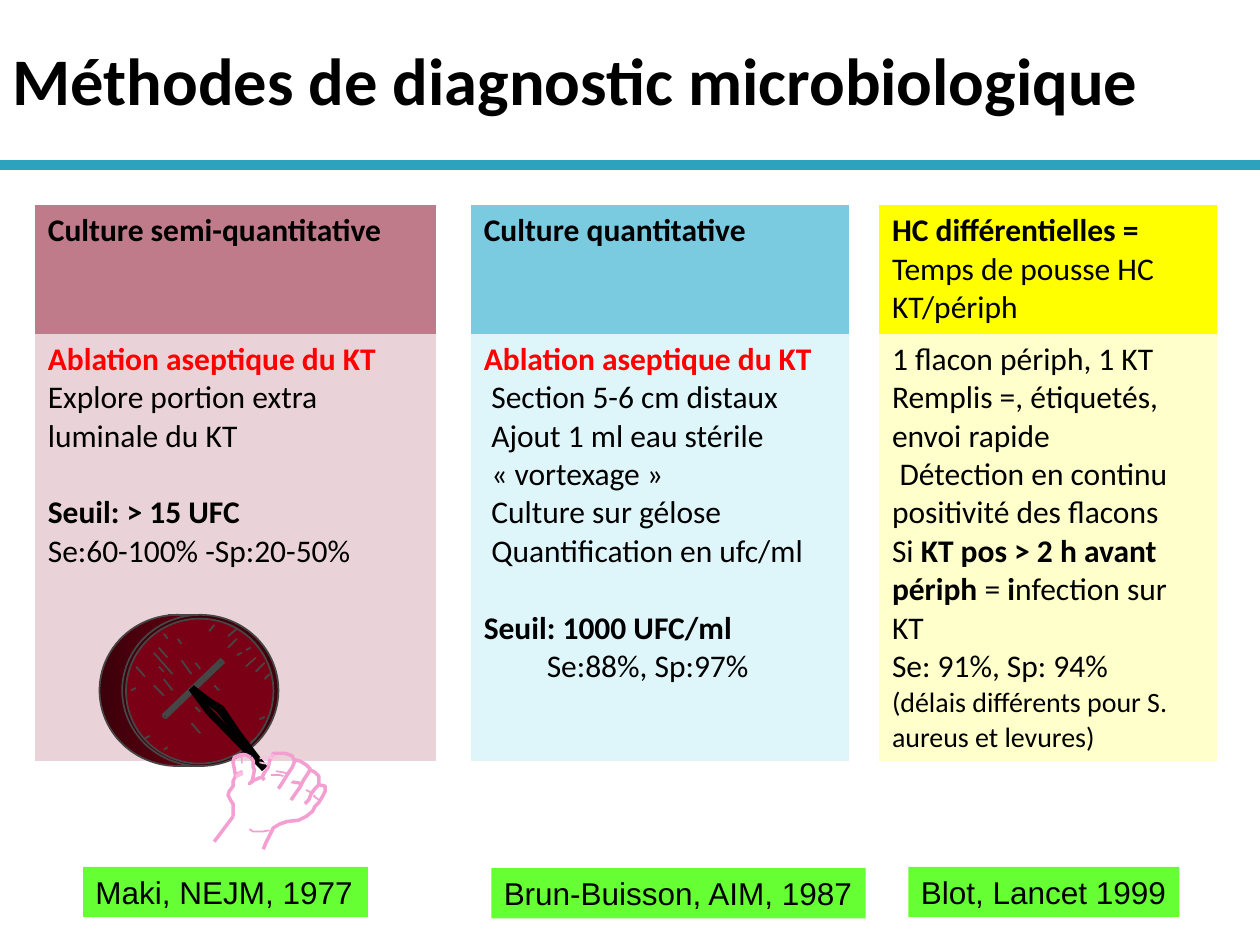
"""Build a slide comparing three microbiological methods of catheter diagnosis."""
import dataclasses
import typing
import lxml.etree
import pptx
import pptx.dml.color
import pptx.enum.shapes
import pptx.enum.text
import pptx.oxml.ns
import pptx.shapes.shapetree
import pptx.slide
import pptx.text.text
import pptx.util

Inches = pptx.util.Inches
Pt = pptx.util.Pt
RGB = pptx.dml.color.RGBColor.from_string
Shape = pptx.enum.shapes.MSO_SHAPE
Tree = pptx.shapes.shapetree.SlideShapes
Point = tuple[float, float]
Box = tuple[float, float, float, float]

@dataclasses.dataclass(frozen=True)
class Theme:
    sans: str = "Calibri"
    plain: str = "Arial"
    ink: str = "000000"
    white: str = "FFFFFF"
    alert: str = "FF0000"
    rule: str = "2DA2BF"
    label: str = "66FF33"
    edge: str = "464646"
    dish: str = "790015"
    shade: str = "3C000A"
    rim: str = "3F000B"
    skin: str = "F39FD1"
    pale: str = "FDC0E5"
    title: float = 38
    body: float = 18
    small: float = 16
    line: float = 22

THEME = Theme()

class Bit(typing.NamedTuple):
    text: str
    bold: bool = False
    color: str = THEME.ink
    size: float = THEME.body

class Para(typing.NamedTuple):
    bits: tuple[Bit, ...]
    inset: float = 0
    left: float = 0
    before: float = 0

class Method(typing.NamedTuple):
    head: Para
    body: list[Para]
    dark: str
    light: str

class Stroke(typing.NamedTuple):
    points: list[tuple[int, int]]
    color: str = THEME.skin
    width: float = 2
    fill: str | None = None

def para(text: str, bold: bool = False, color: str = THEME.ink, size: float = THEME.body, **space: float) -> Para:
    """Make a paragraph with a single run."""
    return Para((Bit(text, bold, color, size),), **space)

REMOVE = para("Ablation aseptique du KT", True, THEME.alert)
STEPS = ["Section 5-6 cm distaux", "Ajout 1 ml eau stérile", "« vortexage »", "Culture sur gélose", "Quantification en ufc/ml"]
METHODS = [
    Method(para("Culture semi-quantitative", True), [
        REMOVE, para("Explore portion extra luminale du KT"),
        para("Seuil: > 15 UFC", True, before=THEME.line), para("Se:60-100% -Sp:20-50%")], "C07B8A", "EAD3D8"),
    Method(para("Culture quantitative", True), [
        REMOVE, *(para(step, inset=0.06) for step in STEPS),
        para("Seuil: 1000 UFC/ml", True, before=THEME.line), para("Se:88%, Sp:97%", left=0.5)], "7ACBE0", "DEF5FA"),
    Method(Para((Bit("HC différentielles = ", True), Bit("Temps de pousse HC KT/périph"))), [
        para("1 flacon périph, 1 KT"), para("Remplis =, étiquetés, envoi rapide"),
        para("Détection en continu positivité des flacons", inset=0.06),
        Para((Bit("Si "), Bit("KT pos > 2 h avant périph ", True), Bit("= "), Bit("i", True), Bit("nfection sur KT"))),
        para("Se: 91%, Sp: 94%"),
        para("(délais différents pour S. aureus et levures)", size=THEME.small)], "FFFF00", "FFFFCC"),
]
LABELS = {
    "Maki, NEJM, 1977": (0.66, 6.88, 2.26, 0.4),
    "Brun-Buisson, AIM, 1987": (3.9, 6.89, 2.97, 0.4),
    "Blot, Lancet 1999": (7.21, 6.88, 2.15, 0.4),
}
NEEDLE = [((1.74, 5.63), 4), ((1.66, 5.65), 4), ((1.77, 5.61), 1)]
TICKS = [
    (1.55, 4.88, 1.33, 4.88), (1.59, 6.08, 1.37, 6.08), (1.44, 5.24, 1.52, 5.35), (1.22, 5.18, 1.37, 5.35),
    (1.08, 5.29, 1.15, 5.37), (1.26, 5.14, 1.33, 5.22), (1.26, 5.29, 1.3, 5.33), (1.52, 5.74, 1.59, 5.82),
    (1.22, 5.44, 1.3, 5.52), (1.3, 5.39, 1.37, 5.48), (1.7, 5.44, 1.74, 5.48), (1.55, 5.26, 1.59, 5.31),
    (1.41, 5.07, 1.44, 5.11), (1.3, 5.03, 1.33, 5.07), (1.55, 5.61, 1.59, 5.65), (1.88, 5.07, 1.81, 5.14),
    (1.88, 4.99, 1.81, 5.05), (1.99, 5.14, 1.95, 5.16), (1.7, 4.96, 1.66, 5.01), (2.1, 5.26, 2.03, 5.33),
    (2.03, 5.22, 1.95, 5.29), (2.14, 5.35, 2.1, 5.39), (2.03, 5.86, 1.99, 5.89), (2.1, 5.69, 2.06, 5.71),
    (1.08, 5.46, 1.04, 5.48), (1.19, 5.84, 1.15, 5.86), (1.33, 5.93, 1.3, 5.95), (1.92, 5.18, 1.88, 5.2),
]
HAND = [
    Stroke([(232, 604), (234, 603), (238, 604), (243, 607), (246, 610), (245, 613), (241, 619), (238, 625), (233, 632), (231, 635)]),
    Stroke([(246, 611), (250, 613), (253, 616), (253, 623), (250, 626), (247, 630), (245, 635), (242, 638)]),
    Stroke([(199, 601), (195, 599), (191, 599), (186, 601), (185, 605), (186, 610), (187, 616), (185, 620),
            (185, 624), (182, 628), (181, 631), (183, 635), (185, 638), (185, 648)]),
    Stroke([(199, 601), (201, 604), (201, 609), (202, 611), (201, 616), (200, 620), (198, 622), (202, 619), (207, 617)]),
    Stroke([(210, 619), (208, 617), (210, 613), (213, 609), (214, 604), (217, 598), (227, 598), (232, 600),
            (234, 604), (232, 609), (228, 615), (225, 620), (221, 626)]),
    Stroke([(254, 623), (258, 624), (258, 628), (256, 632), (253, 637), (250, 640), (248, 644), (243, 648),
            (237, 651), (228, 652), (222, 654), (217, 657), (215, 661), (211, 669), (209, 674)]),
    Stroke([(214, 606), (210, 606), (206, 605)], THEME.pale, 1),
    Stroke([(192, 601), (188, 600), (192, 601), (192, 606)], width=1),
    Stroke([(217, 599), (212, 601), (206, 602)], THEME.pale, 1),
    Stroke([(192, 612), (191, 613), (187, 614)], width=1, fill=THEME.white),
    Stroke([(192, 614), (190, 614), (188, 616)], THEME.pale, fill=THEME.white),
    Stroke([(221, 601), (217, 601), (216, 602), (214, 601)], THEME.pale, 1),
    Stroke([(239, 623), (238, 621), (232, 620)], width=1),
    Stroke([(247, 631), (247, 629), (243, 627)], width=1),
    Stroke([(239, 623), (237, 622), (231, 621)], width=1),
    Stroke([(254, 636), (252, 634), (249, 632), (250, 631)], width=1),
    Stroke([(214, 659), (208, 660), (201, 660), (198, 658)], width=1),
    Stroke([(228, 614), (225, 613), (219, 612)], width=1),
    Stroke([(225, 616), (222, 615), (215, 615)], width=1),
]

def write(frame: pptx.text.text.TextFrame, paras: list[Para], face: str = THEME.sans) -> None:
    """Write styled paragraphs into a text frame."""
    for i, item in enumerate(paras):
        par = frame.add_paragraph() if i else frame.paragraphs[0]
        par.text = item.bits[0].text
        for bit in item.bits[1:]:
            par.add_run().text = bit.text
        par.alignment, par.space_before = pptx.enum.text.PP_ALIGN.LEFT, Pt(item.before)
        props = par._p.get_or_add_pPr()
        props.set("marL", str(Inches(item.left)))
        props.set("indent", str(Inches(item.inset)))
        for run, bit in zip(par.runs, item.bits):
            run.font.name, run.font.size, run.font.bold = face, Pt(bit.size), bit.bold
            run.font.color.rgb = RGB(bit.color)

def paint(item: typing.Any, color: str) -> None:
    """Fill a shape or cell with one colour."""
    item.fill.solid()
    item.fill.fore_color.rgb = RGB(color)

def draw_line(shapes: Tree, start: Point, end: Point, color: str, width: float) -> None:
    """Draw a straight line without a shadow."""
    line = shapes.add_connector(pptx.enum.shapes.MSO_CONNECTOR.STRAIGHT, *map(Inches, start + end))
    line.line.color.rgb, line.line.width = RGB(color), Pt(width)
    lxml.etree.SubElement(line._element.spPr, pptx.oxml.ns.qn("a:effectLst"))

def draw_stroke(shapes: Tree, stroke: Stroke) -> None:
    """Draw one stroke of the hand from points in hundredths of an inch."""
    pen = shapes.build_freeform(*stroke.points[0], scale=Inches(0.01))
    pen.add_line_segments(stroke.points[1:], close=bool(stroke.fill))
    shape = pen.convert_to_shape()
    shape.shadow.inherit = False
    shape.line.color.rgb, shape.line.width = RGB(stroke.color), Pt(stroke.width)
    shape.fill.background()
    if stroke.fill:
        paint(shape, stroke.fill)

def draw_disc(shapes: Tree, box: Box, color: str, shade: str | None = None) -> None:
    """Draw a round part of the dish, fading to the shade if there is one."""
    disc = shapes.add_shape(Shape.OVAL, *map(Inches, box))
    disc.rotation, disc.shadow.inherit = 90, False
    disc.line.color.rgb, disc.line.width = RGB(THEME.edge), Pt(1)
    paint(disc, color)
    if shade:
        disc.fill.gradient()
        disc.fill.gradient_angle = 270
        for stop, tone in zip(disc.fill.gradient_stops, (color, shade)):
            stop.color.rgb = RGB(tone)

def draw_dish(shapes: Tree) -> None:
    """Draw the culture dish, the needle and the hand."""
    draw_disc(shapes, (0.81, 4.86, 1.2, 1.24), THEME.dish, THEME.shade)
    draw_disc(shapes, (0.99, 4.86, 1.2, 1.24), THEME.rim)
    draw_disc(shapes, (1.01, 4.9, 1.15, 1.17), THEME.dish)
    draw_line(shapes, (1.77, 5.24), (1.3, 5.69), THEME.edge, 3.75)
    for bend, width in NEEDLE:
        draw_line(shapes, (1.52, 5.46), bend, THEME.ink, width)
        draw_line(shapes, bend, (2.1, 6.1), THEME.ink, width)
    for left, top in ((1.74, 5.24), (1.3, 5.67)):
        draw_disc(shapes, (left, top, 0.02, 0.03), THEME.ink)
    for tick in TICKS:
        draw_line(shapes, tick[:2], tick[2:], THEME.edge, 1)
    draw_line(shapes, (1.85, 6.48), (1.7, 6.68), THEME.skin, 2)
    for stroke in HAND:
        draw_stroke(shapes, stroke)

def draw_table(shapes: Tree) -> None:
    """Draw the methods as table columns with clear gaps between."""
    table = shapes.add_table(2, 5, *map(Inches, (0.28, 1.63, 9.38, 4.41))).table
    table.first_row = table.horz_banding = False
    table._tbl.tblPr[0].text = "{2D5ABB26-0587-4C30-8999-92F81FD0307C}"
    for col, width in zip(table.columns, (3.18, 0.28, 3, 0.24, 2.68)):
        col.width = Inches(width)
    for row, height in zip(table.rows, (1.02, 3.39)):
        row.height = Inches(height)
    for cell in table.iter_cells():
        cell.fill.background()
    for i, item in enumerate(METHODS):
        for j, (paras, color) in enumerate((([item.head], item.dark), (item.body, item.light))):
            paint(table.cell(j, 2 * i), color)
            write(table.cell(j, 2 * i).text_frame, paras)

def draw_label(shapes: Tree, text: str, box: Box) -> None:
    """Draw a green source label."""
    shape = shapes.add_shape(Shape.RECTANGLE, *map(Inches, box))
    shape.shadow.inherit = False
    paint(shape, THEME.label)
    shape.line.fill.background()
    frame = shape.text_frame
    frame.word_wrap, frame.auto_size = False, pptx.enum.text.MSO_AUTO_SIZE.SHAPE_TO_FIT_TEXT
    frame.vertical_anchor = pptx.enum.text.MSO_ANCHOR.TOP
    write(frame, [para(text)], THEME.plain)

def main() -> None:
    """Build and save the slide."""
    deck = pptx.Presentation()
    deck.slide_width, deck.slide_height = Inches(10), Inches(7.5)
    shapes = deck.slides.add_slide(deck.slide_layouts[6]).shapes
    draw_line(shapes, (0, 1.31), (10, 1.31), THEME.rule, 6)
    frame = shapes.add_textbox(*map(Inches, (0, 0, 10, 1.25))).text_frame
    frame.word_wrap, frame.vertical_anchor = True, pptx.enum.text.MSO_ANCHOR.MIDDLE
    write(frame, [para("Méthodes de diagnostic microbiologique", True, size=THEME.title)])
    draw_table(shapes)
    for text, box in LABELS.items():
        draw_label(shapes, text, box)
    draw_dish(shapes.add_group_shape().shapes)
    deck.save("out.pptx")

if __name__ == "__main__":
    main()
